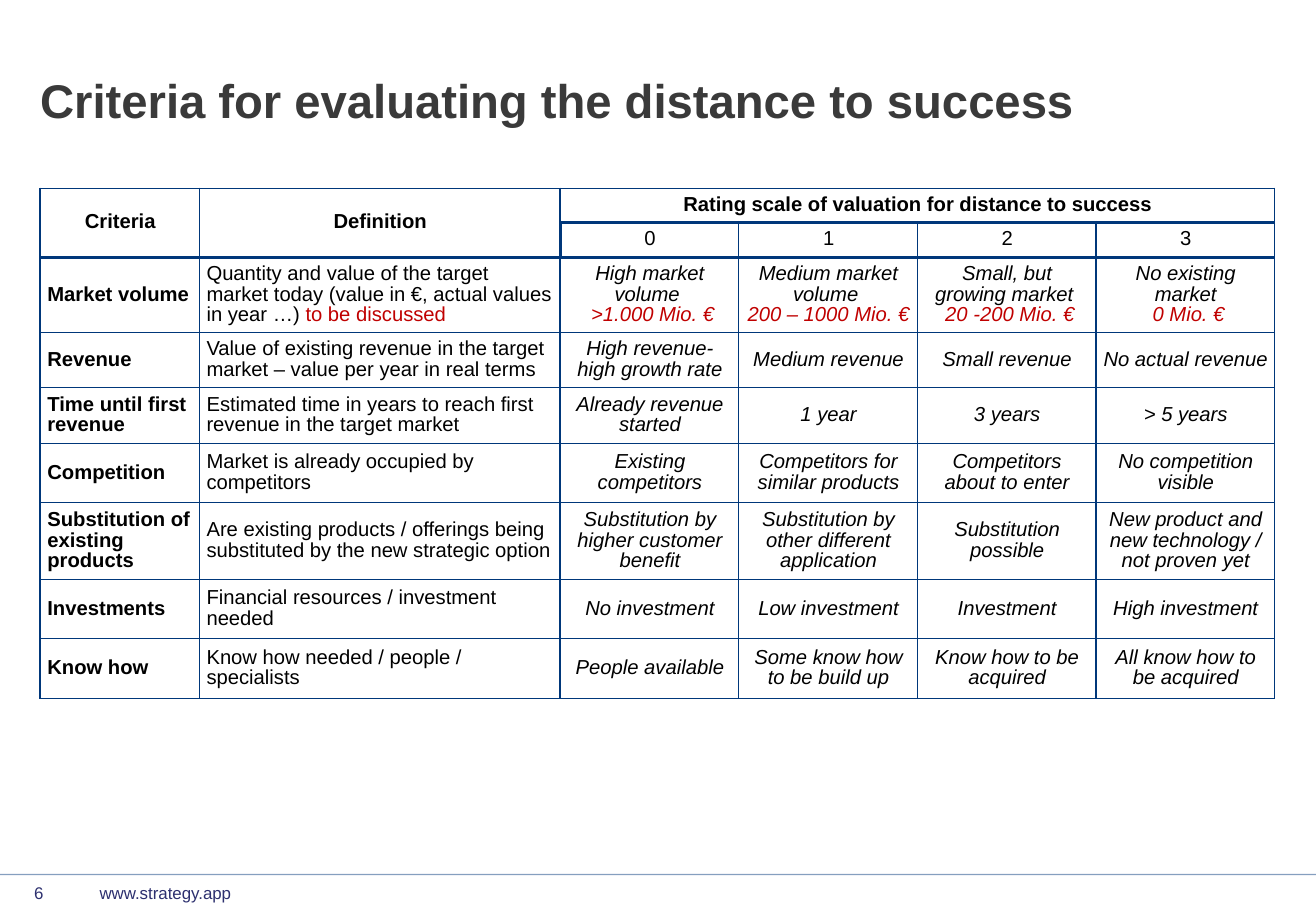
from lxml.etree import SubElement
from pptx import Presentation
from pptx.dml.color import RGBColor
from pptx.enum.shapes import MSO_CONNECTOR
from pptx.enum.text import MSO_ANCHOR, PP_ALIGN
from pptx.oxml import parse_xml
from pptx.oxml.ns import nsdecls, qn
from pptx.util import Inches, Pt

COLORS = {"navy": "00377A", "footer": "2D306F", "title": "3A3A3A",
          "black": "000000", "red": "C00000"}


def style(run, size, color, bold=False, italic=False):
    run.font.name = "Arial"
    run.font.size = Pt(size)
    run.font.bold = bold
    run.font.italic = italic
    run.font.color.rgb = RGBColor.from_string(COLORS[color])


def border_cell(cell, widths):
    properties = cell._tc.get_or_add_tcPr()
    for place, (side, width) in enumerate(zip("LRTB", widths)):
        properties.insert(place, parse_xml(
            f'<a:ln{side} {nsdecls("a")} w="{Pt(width)}"><a:solidFill>'
            f'<a:srgbClr val="{COLORS["navy"]}"/></a:solidFill></a:ln{side}>'))


presentation = Presentation()
presentation.slide_width = Inches(10.83)
presentation.slide_height = Inches(7.5)
slide = presentation.slides.add_slide(presentation.slide_layouts[5])

# Title
title = slide.shapes.title
title.left, title.top = Inches(0.33), Inches(0.65)
title.width, title.height = Inches(10.16), Inches(0.55)
heading = title.text_frame
heading.text = "Criteria for evaluating the distance to success"
heading.margin_left = heading.margin_right = 0
heading.margin_top = heading.margin_bottom = 0
heading.vertical_anchor = MSO_ANCHOR.TOP
heading.paragraphs[0].alignment = PP_ALIGN.LEFT
heading.paragraphs[0].line_spacing = 0.88
style(heading.paragraphs[0].runs[0], 28, "title", bold=True)

# Footer rule, page number and address
rule = slide.shapes.add_connector(
    MSO_CONNECTOR.STRAIGHT, 0, Inches(7.2), presentation.slide_width, Inches(7.2))
rule.line.width = Pt(0.75)
rule.line.color.rgb = RGBColor.from_string(COLORS["navy"])
rule_color = rule._element.spPr.find(".//" + qn("a:srgbClr"))
SubElement(rule_color, qn("a:alpha")).set("val", "47000")
SubElement(rule._element.spPr, qn("a:effectLst"))

for left, width, words in ((0.23, 0.19, "6"), (0.77, 2.43, "www.strategy.app")):
    footer = slide.shapes.add_textbox(
        Inches(left), Inches(7.22), Inches(width), Inches(0.25)).text_frame
    footer.word_wrap = len(words) > 1
    footer.margin_left = footer.margin_right = Inches(0.05)
    footer.margin_top = footer.margin_bottom = Inches(0.05)
    footer.text = words
    style(footer.paragraphs[0].runs[0], 10, "footer")

# Table content: "|" separates black text from red text, "\v" breaks a line
criteria_rows = [
    ["Criteria", "Definition",
     "Rating scale of valuation for distance to success", "", "", ""],
    ["", "", "0", "1", "2", "3"],
    ["Market volume",
     "Quantity and value of the target market today "
     "(value in €, actual values in year …) |to be discussed",
     "High market volume \v| >1.000 Mio. €",
     "Medium market volume \v|200 – 1000 Mio. €",
     "Small, but growing market \v| 20 -200 Mio. €",
     "No existing market\v| 0 Mio. €"],
    ["Revenue",
     "Value of existing revenue in the target market – value per year in real terms",
     "High revenue- high growth rate", "Medium revenue", "Small revenue",
     "No actual revenue"],
    ["Time until first revenue",
     "Estimated time in years to reach first revenue in the target market",
     "Already revenue started", "1 year", "3 years", "> 5 years"],
    ["Competition", "Market is already occupied by competitors",
     "Existing competitors", "Competitors for similar products",
     "Competitors about to enter", "No competition visible"],
    ["Substitution of existing products",
     "Are existing products / offerings being substituted by the new strategic option",
     "Substitution by higher customer benefit",
     "Substitution by other different application", "Substitution possible",
     "New product and new technology / not proven yet"],
    ["Investments", "Financial resources / investment needed",
     "No investment", "Low investment", "Investment", "High investment"],
    ["Know how", "Know how needed / people / specialists",
     "People available", "Some know how to be build up",
     "Know how to be acquired", "All know how to be acquired"],
]
column_widths = [1.31, 2.97] + [1.47] * 4
row_heights = [0.28, 0.29, 0.62, 0.45, 0.46, 0.49, 0.63, 0.49, 0.49]

# Table grid
criteria = slide.shapes.add_table(
    len(row_heights), len(column_widths), Inches(0.33), Inches(1.55),
    Inches(sum(column_widths)), Inches(sum(row_heights))).table
criteria.first_row = criteria.horz_banding = False
for column, width in zip(criteria.columns, column_widths):
    column.width = Inches(width)
for row, height in zip(criteria.rows, row_heights):
    row.height = Inches(height)

# Table cells
for r, texts in enumerate(criteria_rows):
    for c, text in enumerate(texts):
        cell = criteria.cell(r, c)
        cell.fill.background()
        cell.vertical_anchor = MSO_ANCHOR.MIDDLE
        cell.margin_left, cell.margin_right = Inches(0.06), Inches(0.05)
        cell.margin_top = cell.margin_bottom = Inches(0.04)
        border_cell(cell, (2 if r == 1 and c == 2 else 1, 1,
                           2 if r in (1, 2) else 1, 2 if r < 2 else 1))
        paragraph = cell.text_frame.paragraphs[0]
        black, _, red = text.partition("|")
        paragraph.text = black
        if red:
            paragraph.add_run().text = red
        paragraph.line_spacing = 0.9
        paragraph.alignment = PP_ALIGN.CENTER if r < 2 or c > 1 else PP_ALIGN.LEFT
        for run in paragraph.runs:
            style(run, 12, "red" if red and run.text == red else "black",
                  bold=r == 0 or c == 0, italic=r > 1 and c > 1)

# Header spans
criteria.cell(0, 0).merge(criteria.cell(1, 0))
criteria.cell(0, 1).merge(criteria.cell(1, 1))
criteria.cell(0, 2).merge(criteria.cell(0, 5))

presentation.save("out.pptx")
